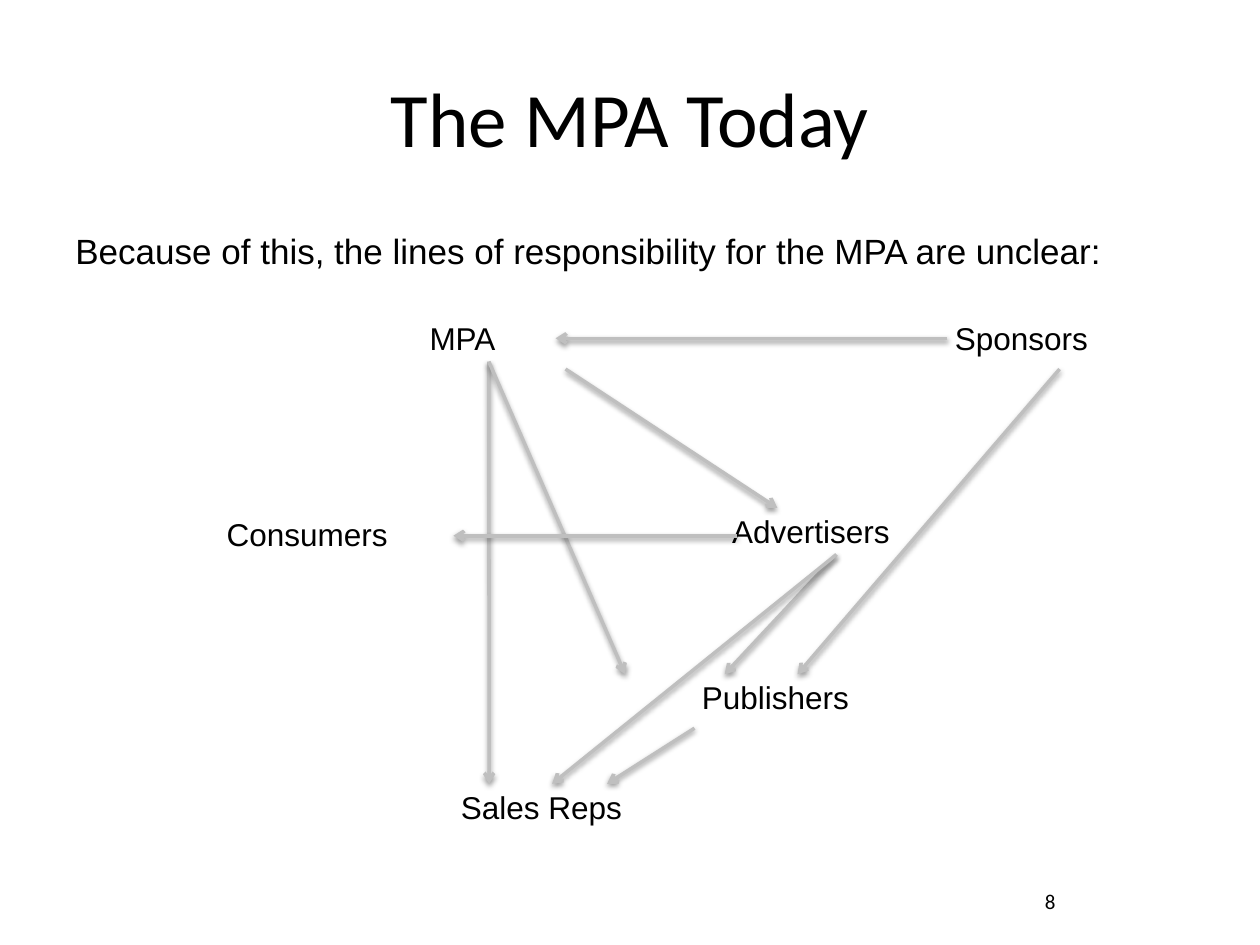
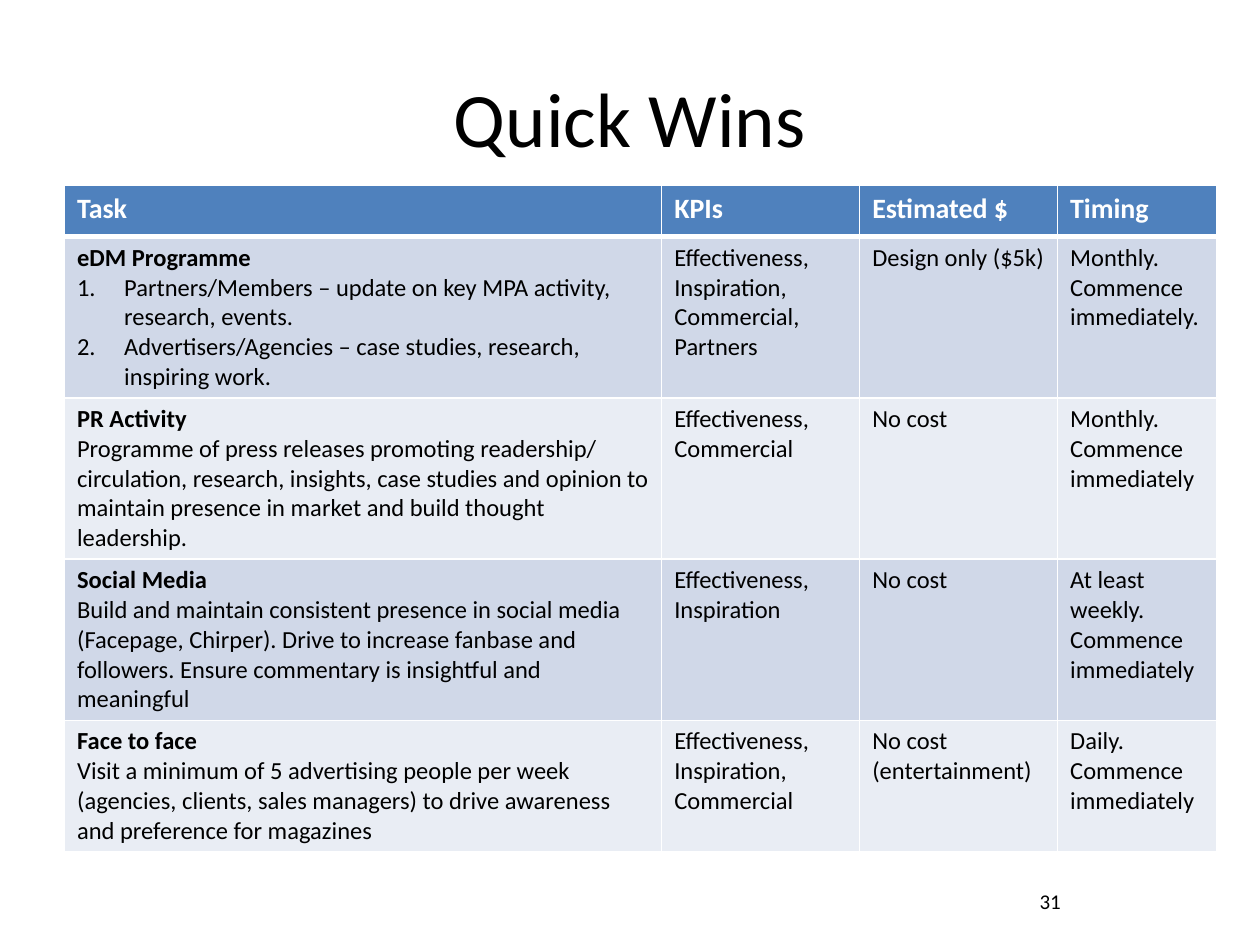
"""Build two slides: the lines of responsibility around the MPA and its quick wins."""
from dataclasses import dataclass
from typing import Any, NamedTuple

import pptx
import pptx.dml.color
import pptx.enum.shapes
import pptx.enum.text
import pptx.oxml
import pptx.oxml.ns
import pptx.util
from pptx.util import Cm

COLORS = {
    "text": "000000", "paper": "FFFFFF", "arrow": "BFBFBF",
    "head": "4F81BD", "odd": "D0D8E8", "even": "E9EDF4",
}
FORMATS: dict[str, dict[str, Any]] = {
    "title": {"name": "Calibri", "size": pptx.util.Pt(44)},
    "lead": {"name": "Arial", "size": pptx.util.Pt(20)},
    "label": {"name": "Arial", "size": pptx.util.Pt(18)},
    "number": {"name": "Calibri", "size": pptx.util.Pt(12)},
    "head": {"name": "Calibri", "size": pptx.util.Pt(16), "bold": True},
    "task": {"name": "Calibri", "size": pptx.util.Pt(14), "bold": True},
    "cell": {"name": "Calibri", "size": pptx.util.Pt(14), "bold": False},
}
LABEL_FRAME = {
    "margin_left": Cm(0.15), "margin_right": Cm(0.15),
    "margin_top": Cm(0.08), "margin_bottom": Cm(0.08),
    "auto_size": pptx.enum.text.MSO_AUTO_SIZE.SHAPE_TO_FIT_TEXT,
}
MIDDLE = {"vertical_anchor": pptx.enum.text.MSO_ANCHOR.MIDDLE}
CENTER = pptx.enum.text.PP_ALIGN.CENTER
LEFT = pptx.enum.text.PP_ALIGN.LEFT
SIDE_LEFT, SIDE_BOTTOM, SIDE_RIGHT = 1, 2, 3


class Box(NamedTuple):
    left: float
    top: float
    width: float
    height: float


class Spot(NamedTuple):
    x: float
    y: float


class Joint(NamedTuple):
    label: str
    side: int


@dataclass(frozen=True)
class Label:
    text: str
    left: float
    top: float
    width: float = 4.5


@dataclass(frozen=True)
class Arrow:
    start: Spot | Joint
    end: Spot | Joint


@dataclass(frozen=True)
class Win:
    task: str
    details: tuple[str, ...]
    kpis: str
    cost: str
    timing: str
    height: float = 3.25


LABELS = (
    Label("MPA", 8.51, 6.35, 2.69),
    Label("Sponsors", 19.1, 6.35, 3.84),
    Label("Advertisers", 14.61, 10.24),
    Label("Publishers", 14, 13.59),
    Label("Sales Reps", 9.14, 15.8),
    Label("Consumers", 4.42, 10.31),
)
ARROWS = (
    Arrow(Joint("MPA", SIDE_BOTTOM), Spot(9.86, 15.8)),
    Arrow(Joint("Sponsors", SIDE_LEFT), Joint("MPA", SIDE_RIGHT)),
    Arrow(Spot(11.4, 7.44), Spot(15.67, 10.24)),
    Arrow(Joint("MPA", SIDE_BOTTOM), Spot(12.6, 13.59)),
    Arrow(Joint("Advertisers", SIDE_BOTTOM), Spot(14.61, 13.59)),
    Arrow(Joint("Advertisers", SIDE_BOTTOM), Spot(11.13, 15.8)),
    Arrow(Spot(21.36, 7.44), Spot(16.08, 13.59)),
    Arrow(Spot(14.86, 10.8), Spot(9.14, 10.8)),
    Arrow(Spot(14, 14.68), Spot(12.24, 15.8)),
)
HEADS = ("Task", "KPIs", "Estimated $", "Timing")
WIDTHS = (12.04, 3.99, 3.99, 3.2)
HEAD_HEIGHT = 1.04
WINS = (
    Win("eDM Programme",
        ("Partners/Members – update on key MPA activity, research, events.",
         "Advertisers/Agencies – case studies, research, inspiring work."),
        "Effectiveness, Inspiration, Commercial, Partners",
        "Design only ($5k)", "Monthly. Commence immediately."),
    Win("PR Activity",
        ("Programme of press releases promoting readership/ circulation, research, "
         "insights, case studies and opinion to maintain presence in market and "
         "build thought leadership.",),
        "Effectiveness, Commercial", "No cost", "Monthly. Commence immediately"),
    Win("Social Media",
        ("Build and maintain consistent presence in social media (Facepage, Chirper). "
         "Drive to increase fanbase and followers. Ensure commentary is insightful "
         "and meaningful",),
        "Effectiveness, Inspiration", "No cost",
        "At least weekly. Commence immediately"),
    Win("Face to face",
        ("Visit a minimum of 5 advertising people per week (agencies, clients, sales "
         "managers) to drive awareness and preference for magazines",),
        "Effectiveness, Inspiration, Commercial", "No cost (entertainment)",
        "Daily. Commence immediately", 2.65),
)


def rgb(color: str) -> pptx.dml.color.RGBColor:
    """Return the named colour."""
    return pptx.dml.color.RGBColor.from_string(COLORS[color])


def apply(target: Any, values: dict[str, Any]) -> None:
    """Set every attribute in values on the target."""
    for name, value in values.items():
        setattr(target, name, value)


def add_xml(parent: Any, tag: str, body: str = "", **attrs: Any) -> None:
    """Append a drawing element with its attributes and inner markup."""
    pairs = " ".join(f'{name}="{value}"' for name, value in attrs.items())
    space = pptx.oxml.ns.nsdecls("a")
    parent.append(pptx.oxml.parse_xml(f"<a:{tag} {space} {pairs}>{body}</a:{tag}>"))


def write(para: Any, text: str, style: str, color: str = "text", align: Any = LEFT) -> None:
    """Fill a paragraph with styled text."""
    run = para.add_run()
    run.text = text
    para.alignment = align
    apply(run.font, FORMATS[style])
    run.font.color.rgb = rgb(color)


def add_text(slide: Any, box: Box, text: str, style: str,
             frame: dict[str, Any], align: Any = LEFT) -> Any:
    """Add a wrapped text box and return it."""
    shape = slide.shapes.add_textbox(*map(Cm, box))
    shape.text_frame.word_wrap = True
    apply(shape.text_frame, frame)
    write(shape.text_frame.paragraphs[0], text, style, align=align)
    return shape


def add_slide(deck: Any, title: str, number: str) -> Any:
    """Add a slide with its title and page number."""
    slide = deck.slides.add_slide(deck.slide_layouts[5])
    shape = slide.shapes.title
    apply(shape, {"left": Cm(1.27), "top": Cm(0.76), "width": Cm(22.86), "height": Cm(3.18)})
    apply(shape.text_frame, MIDDLE)
    write(shape.text_frame.paragraphs[0], title, "title", align=CENTER)
    add_text(slide, Box(18.21, 17.65, 5.92, 1.02), number, "number", MIDDLE, CENTER)
    return slide


def add_arrow(slide: Any, arrow: Arrow, boxes: dict[str, Any]) -> None:
    """Draw one shadowed arrow, joined to labels where it has joints."""
    ends = [end if isinstance(end, Spot) else Spot(0, 0) for end in (arrow.start, arrow.end)]
    line = slide.shapes.add_connector(
        pptx.enum.shapes.MSO_CONNECTOR.STRAIGHT, *(Cm(value) for end in ends for value in end))
    joins = ((arrow.start, line.begin_connect), (arrow.end, line.end_connect))
    for end, join in joins:
        if isinstance(end, Joint):
            join(boxes[end.label], end.side)
    line.line.color.rgb = rgb("arrow")
    line.line.width = pptx.util.Pt(2)
    add_xml(line.line._get_or_add_ln(), "tailEnd", type="arrow")
    shade = (f'<a:outerShdw blurRad="{pptx.util.Pt(3.1)}" dist="{pptx.util.Pt(1.6)}" '
             f'dir="5400000" rotWithShape="0"><a:srgbClr val="{COLORS["text"]}">'
             '<a:alpha val="38000"/></a:srgbClr></a:outerShdw>')
    add_xml(line._element.spPr, "effectLst", shade)


def style_cell(cell: Any, row: int) -> None:
    """Give a table cell its white borders and band fill."""
    thick = {"lnT": row == 1, "lnB": row == 0}
    paint = f'<a:solidFill><a:srgbClr val="{COLORS["paper"]}"/></a:solidFill>'
    for edge in ("lnL", "lnR", "lnT", "lnB"):
        width = pptx.util.Pt(3 if thick.get(edge) else 1)
        add_xml(cell._tc.get_or_add_tcPr(), edge, paint, w=width)
    cell.fill.solid()
    cell.fill.fore_color.rgb = rgb("head" if row == 0 else "odd" if row % 2 else "even")


def add_details(frame: Any, details: tuple[str, ...]) -> None:
    """Add the detail paragraphs, numbered when there are several."""
    for detail in details:
        para = frame.add_paragraph()
        if len(details) > 1:
            props = para._p.get_or_add_pPr()
            apply_indent = {"marL": Cm(0.95), "indent": -Cm(0.95)}
            for name, value in apply_indent.items():
                props.set(name, str(value))
            add_xml(props, "buFont", typeface="+mj-lt")
            add_xml(props, "buAutoNum", type="arabicPeriod")
        write(para, detail, "cell")


def add_wins(slide: Any) -> None:
    """Draw the table of quick wins."""
    heights = (HEAD_HEIGHT, *(win.height for win in WINS))
    box = Box(1.3, 3.73, sum(WIDTHS), sum(heights))
    table = slide.shapes.add_table(len(heights), len(HEADS), *map(Cm, box)).table
    apply(table, {"first_row": False, "horz_banding": False})
    for col, width in zip(table.columns, WIDTHS):
        col.width = Cm(width)
    texts = (HEADS, *((win.task, win.kpis, win.cost, win.timing) for win in WINS))
    for row, (height, words) in enumerate(zip(heights, texts)):
        table.rows[row].height = Cm(height)
        for col, text in enumerate(words):
            cell = table.cell(row, col)
            style_cell(cell, row)
            style = "head" if row == 0 else "task" if col == 0 else "cell"
            color = "paper" if row == 0 else "text"
            write(cell.text_frame.paragraphs[0], text, style, color)
    for row, win in enumerate(WINS, 1):
        add_details(table.cell(row, 0).text_frame, win.details)


def main() -> None:
    """Build and save the deck."""
    deck = pptx.Presentation()
    apply(deck, {"slide_width": Cm(25.4), "slide_height": Cm(19.05)})
    today = add_slide(deck, "The MPA Today", "8")
    add_text(today, Box(1.27, 4.5, 22.86, 1.2),
             "Because of this, the lines of responsibility for the MPA are unclear:", "lead", {})
    boxes = {label.text: add_text(today, Box(label.left, label.top, label.width, 0.94),
                                  label.text, "label", LABEL_FRAME) for label in LABELS}
    for arrow in ARROWS:
        add_arrow(today, arrow, boxes)
    add_wins(add_slide(deck, "Quick Wins", "31"))
    deck.save("out.pptx")


if __name__ == "__main__":
    main()
